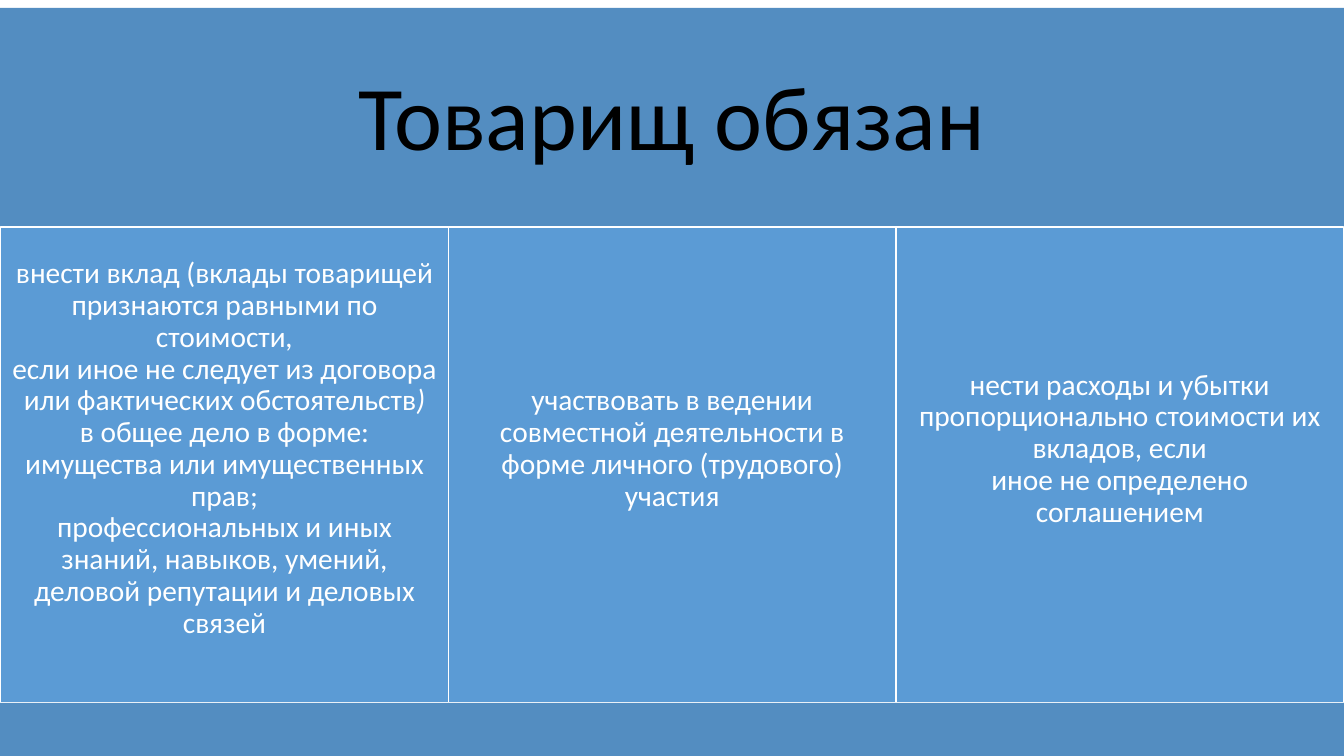
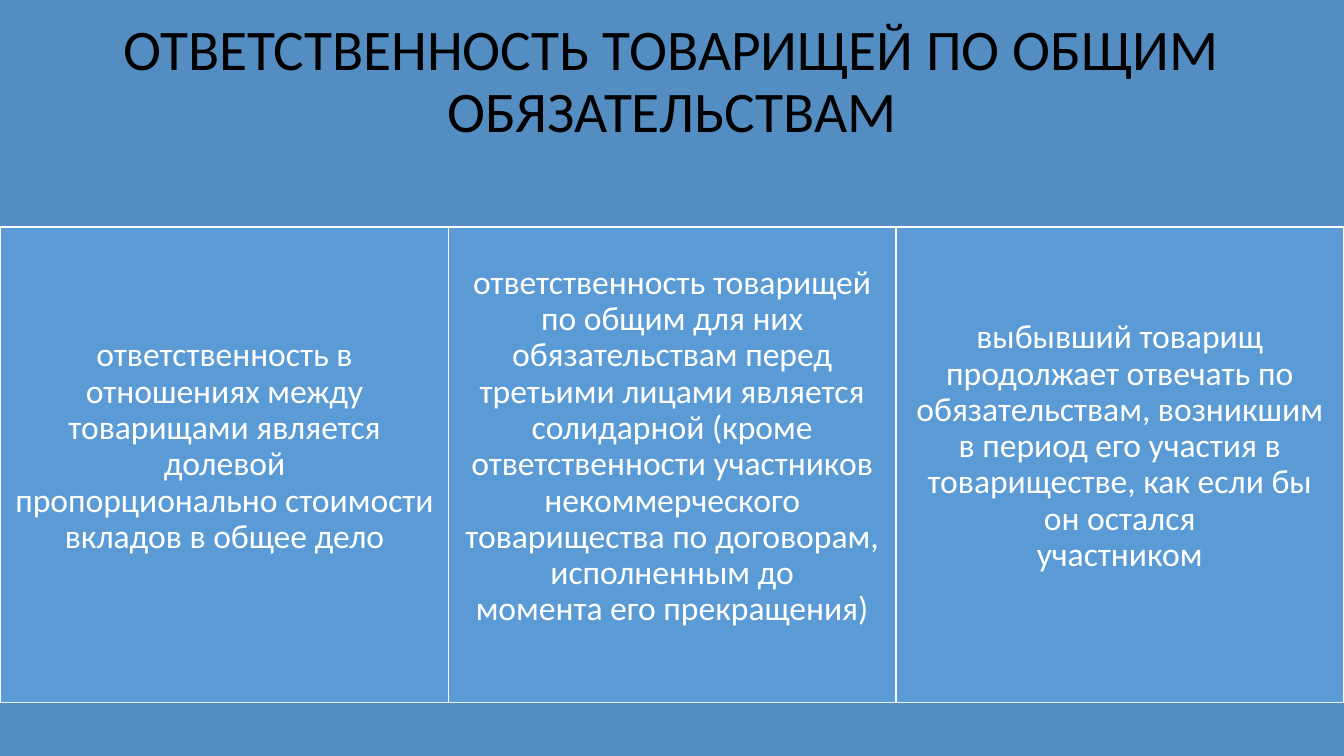
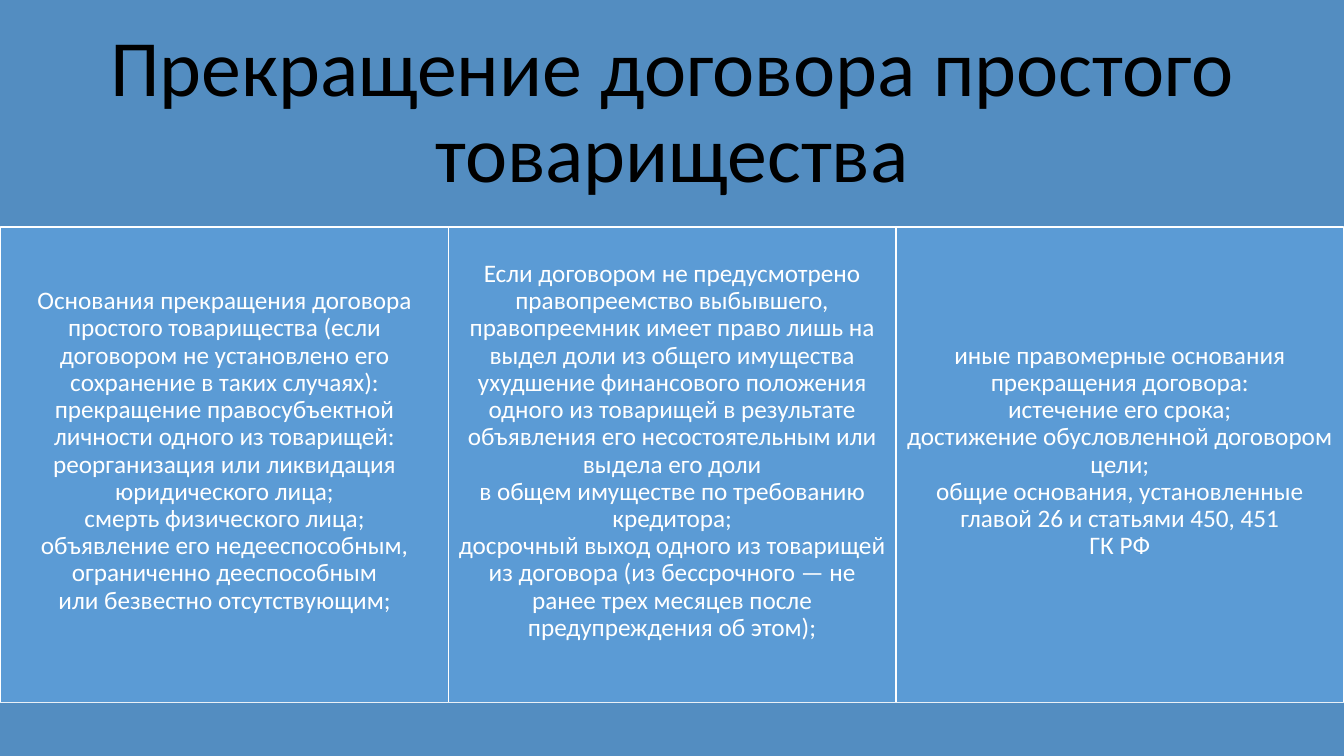
from pptx import Presentation
from pptx.dml.color import RGBColor
from pptx.enum import shapes, text
from pptx.util import Cm, Pt

BAND = RGBColor(0x53, 0x8D, 0xC1)
CELL = RGBColor(0x5B, 0x9B, 0xD5)
WHITE = RGBColor(0xFF, 0xFF, 0xFF)
BLACK = RGBColor(0, 0, 0)
FONT = "Calibri"

# Content: asterisks enclose italics, each string in a list is one line
SLIDES = [
    {
        "title": ["Товарищ обязан"],
        "title_size": 65, "title_top": 0.2, "title_raised": False,
        "cell_size": 21,
        "columns": [
            ["внести вклад (вклады товарищей признаются равными по стоимости*,*",
             "если иное не следует из договора или фактических обстоятельств*)*",
             "в общее дело в форме:",
             "имущества или имущественных прав;",
             "профессиональных и иных знаний, навыков, умений, "
             "деловой репутации и деловых связей"],
            ["участвовать в ведении совместной деятельности в форме "
             "личного (трудового) участия"],
            ["нести расходы и убытки пропорционально стоимости их вкладов, если",
             "иное не определено соглашением"],
        ],
    },
    {
        "title": ["ОТВЕТСТВЕННОСТЬ ТОВАРИЩЕЙ ПО ОБЩИМ", "ОБЯЗАТЕЛЬСТВАМ"],
        "title_size": 41, "title_top": 0, "title_raised": True,
        "cell_size": 24,
        "columns": [
            ["ответственность в отношениях между товарищами является долевой",
             "пропорционально стоимости вкладов в общее дело"],
            ["ответственность товарищей по общим для них обязательствам перед",
             "третьими лицами является солидарной (кроме ответственности участников "
             "некоммерческого товарищества по договорам, исполненным до",
             "момента его прекращения)"],
            ["выбывший товарищ продолжает отвечать по обязательствам, возникшим "
             "в период его участия в товариществе, как если бы он остался",
             "участником"],
        ],
    },
    {
        "title": ["Прекращение договора простого товарищества"],
        "title_size": 57, "title_top": 0, "title_raised": False,
        "cell_size": 18,
        "columns": [
            ["Основания прекращения договора простого товарищества (если",
             "договором не установлено его сохранение в таких случаях):",
             "прекращение правосубъектной личности одного из товарищей:",
             "реорганизация или ликвидация юридического лица;",
             "смерть физического лица;",
             "объявление его недееспособным, ограниченно дееспособным",
             "или безвестно отсутствующим;"],
            ["Если договором не предусмотрено правопреемство выбывшего*, *"
             "правопреемник имеет право лишь на выдел доли из общего имущества",
             "ухудшение финансового положения одного из товарищей в результате "
             "объявления его несостоятельным или выдела его доли",
             "в общем имуществе по требованию кредитора;",
             "досрочный выход одного из товарищей из договора (из бессрочного — "
             "не ранее трех месяцев после предупреждения об этом);"],
            ["иные правомерные основания прекращения договора:",
             "истечение его срока;",
             "достижение обусловленной договором цели;",
             "общие основания, установленные главой 26 и статьями 450, 451",
             "ГК РФ"],
        ],
    },
]

# Layout shared by all slides
SLIDE_W, SLIDE_H = Cm(33.87), Cm(19.05)
TITLE_H = Cm(5.72)
CELL_LEFT, CELL_W, CELL_H = Cm(0.02), Cm(11.28), Cm(11.99)
FOOT_TOP = TITLE_H + CELL_H
LINE_SPACING = 0.9


def write(sp, lines, size, color, raised):
    """Centre the lines in the shape; raised lifts them by half a line."""
    tf = sp.text_frame
    tf.word_wrap = True
    tf.auto_size = text.MSO_AUTO_SIZE.NONE
    tf.vertical_anchor = text.MSO_ANCHOR.MIDDLE
    inset = Pt(0.3 * size)
    tf.margin_left = tf.margin_right = tf.margin_top = inset
    tf.margin_bottom = inset + (Pt(1.2 * LINE_SPACING * size) if raised else 0)
    p = tf.paragraphs[0]
    p.alignment = text.PP_ALIGN.CENTER
    p.line_spacing = LINE_SPACING
    p.font.name, p.font.size, p.font.color.rgb = FONT, Pt(size), color
    for i, line in enumerate(lines):
        if i:
            p.add_line_break()
        for j, part in enumerate(line.split("*")):
            if part:
                r = p.add_run()
                r.text = part
                if j % 2:
                    r.font.italic = True


def add_box(s, left, top, width, height, fill, line=None):
    sp = s.shapes.add_shape(shapes.MSO_SHAPE.RECTANGLE, left, top, width, height)
    sp.shadow.inherit = False
    sp.fill.solid()
    sp.fill.fore_color.rgb = fill
    if line is None:
        sp.line.fill.background()
    else:
        sp.line.color.rgb = line
        sp.line.width = Pt(1)
    return sp


def add_slide(prs, data):
    s = prs.slides.add_slide(prs.slide_layouts[5])

    # Title band
    title = s.shapes.title
    title.left, title.top = 0, Cm(data["title_top"])
    title.width, title.height = SLIDE_W, TITLE_H
    title.fill.solid()
    title.fill.fore_color.rgb = BAND
    write(title, data["title"], data["title_size"], BLACK, data["title_raised"])

    # Three columns
    for i, lines in enumerate(data["columns"]):
        cell = add_box(s, CELL_LEFT + i * CELL_W, TITLE_H, CELL_W, CELL_H, CELL, WHITE)
        write(cell, lines, data["cell_size"], WHITE, True)

    # Bottom band
    add_box(s, 0, FOOT_TOP, SLIDE_W, SLIDE_H - FOOT_TOP, BAND)


def main():
    prs = Presentation()
    prs.slide_width, prs.slide_height = SLIDE_W, SLIDE_H
    for data in SLIDES:
        add_slide(prs, data)
    prs.save("out.pptx")


if __name__ == "__main__":
    main()
